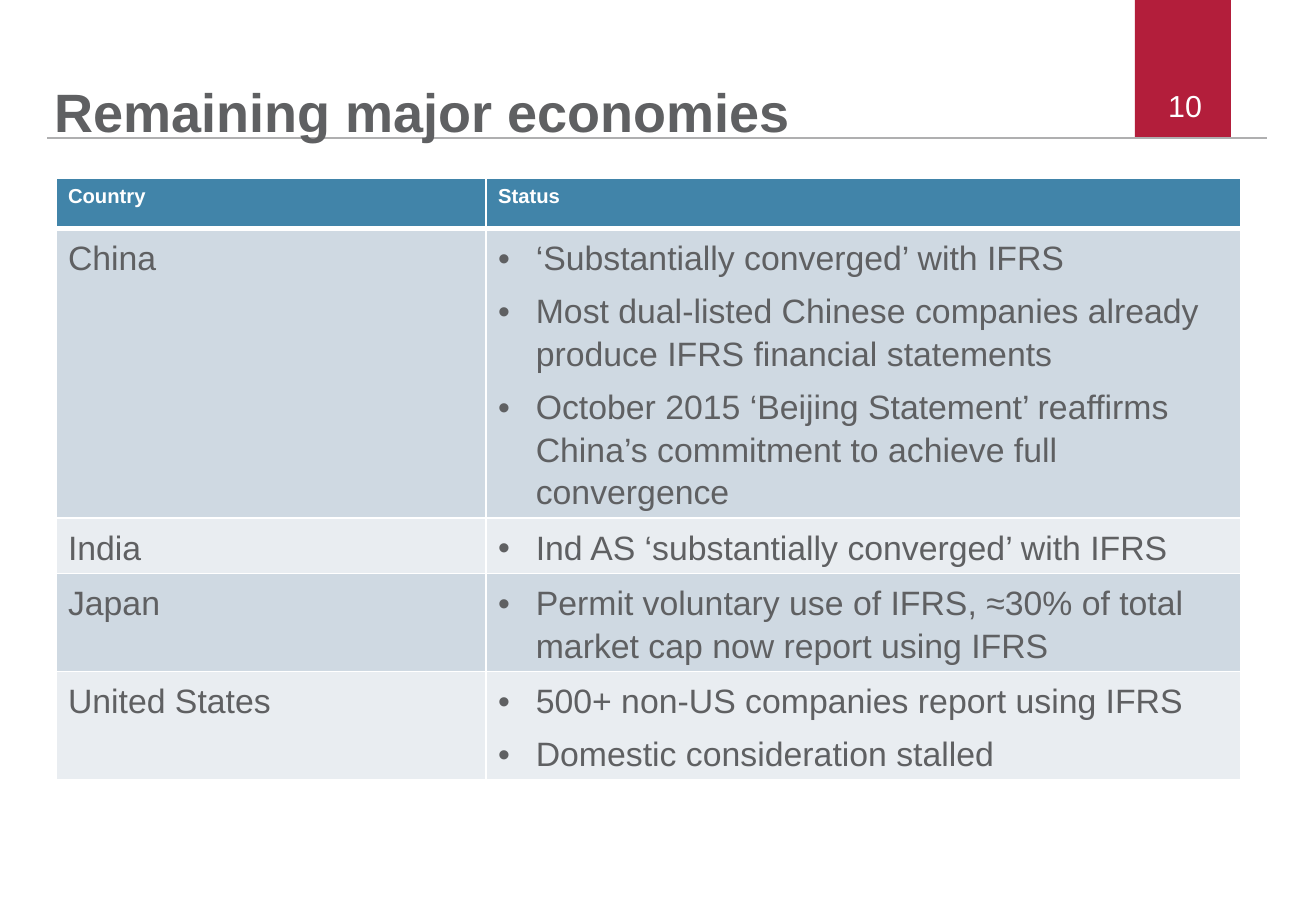
"""Build the slide on the IFRS status of the remaining major economies."""
from lxml import etree
from pptx import Presentation
from pptx.dml.color import RGBColor
from pptx.enum.shapes import MSO_CONNECTOR, MSO_SHAPE
from pptx.enum.text import MSO_ANCHOR, PP_ALIGN
from pptx.oxml.ns import qn
from pptx.util import Inches, Pt

RECT, STRAIGHT = MSO_SHAPE.RECTANGLE, MSO_CONNECTOR.STRAIGHT
BOTTOM, MIDDLE = MSO_ANCHOR.BOTTOM, MSO_ANCHOR.MIDDLE
LEFT, RIGHT = PP_ALIGN.LEFT, PP_ALIGN.RIGHT
COLORS = {"red": "B31E3B", "rule": "AFAFB0", "text": "5F6062", "white": "FFFFFF",
          "header": "4184A9", "dark": "CFD9E2", "light": "E9EDF1"}
RULE_Y = 1.14
COLUMNS = [3.54, 6.21]
ROWS = [
    (0.41, "Country", ["Status"]),
    (2.37, "China", [
        "‘Substantially converged’ with IFRS",
        "Most dual-listed Chinese companies already produce IFRS financial statements",
        "October 2015 ‘Beijing Statement’ reaffirms China’s commitment to achieve full convergence"]),
    (0.45, "India", ["Ind AS ‘substantially converged’ with IFRS"]),
    (0.8, "Japan", ["Permit voluntary use of IFRS, ≈30% of total market cap now report using IFRS"]),
    (0.89, "United States", ["500+ non-US companies report using IFRS", "Domestic consideration stalled"]),
]


def rgb(name):
    """Return the named palette colour."""
    return RGBColor.from_string(COLORS[name])


def add_text(p, text, size, color, bold=False):
    """Add one formatted run to a paragraph."""
    r = p.add_run()
    r.text = text
    r.font.name, r.font.size, r.font.bold = "Arial", Pt(size), bold
    r.font.color.rgb = rgb(color)


prs = Presentation()
prs.slide_width, prs.slide_height = Inches(10.83), Inches(7.5)
s = prs.slides.add_slide(prs.slide_layouts[5])

tab = s.shapes.add_shape(RECT, Inches(9.34), 0, Inches(0.79), Inches(RULE_Y))
tab.shadow.inherit = False
tab.fill.solid()
tab.fill.fore_color.rgb = rgb("red")
tab.line.fill.background()

rule = s.shapes.add_connector(STRAIGHT, Inches(0.39), Inches(RULE_Y), Inches(10.43), Inches(RULE_Y))
rule.line.color.rgb = rgb("rule")
rule.line.width = Pt(1.2)
etree.SubElement(rule.element.spPr, qn("a:effectLst"))

title = s.shapes.title
title.left, title.top, title.width, title.height = map(Inches, (0.38, 0.2, 8.02, 0.99))
s.shapes.element.append(title.element)
tf = title.text_frame
tf.vertical_anchor = BOTTOM
tf.margin_left, tf.margin_bottom = Inches(0.07), 0
p = tf.paragraphs[0]
p.alignment, p.line_spacing = LEFT, 0.9
add_text(p, "Remaining major economies", 32, "text", True)

frame = s.shapes.add_table(len(ROWS), len(COLUMNS), Inches(0.46), Inches(1.47),
                           Inches(sum(COLUMNS)), Inches(sum(row[0] for row in ROWS)))
table = frame.table
for column, width in zip(table.columns, COLUMNS):
    column.width = Inches(width)

for i, (height, country, status) in enumerate(ROWS):
    table.rows[i].height = Inches(height)
    fill = "header" if i == 0 else ("light", "dark")[i % 2]
    for j, lines in enumerate([[country], status]):
        cell = table.cell(i, j)
        cell.fill.solid()
        cell.fill.fore_color.rgb = rgb(fill)
        tcPr = cell.fill._xPr
        for k, side in enumerate(("lnL", "lnR", "lnT", "lnB")):
            thick = (i, side) in ((0, "lnB"), (1, "lnT"))
            ln = etree.Element(qn(f"a:{side}"), w=str(Pt(3 if thick else 1)))
            solid = etree.SubElement(ln, qn("a:solidFill"))
            etree.SubElement(solid, qn("a:srgbClr"), val=COLORS["white"])
            tcPr.insert(k, ln)
        tf = cell.text_frame
        for n, line in enumerate(lines):
            p = tf.add_paragraph() if n else tf.paragraphs[0]
            if i == 0:
                add_text(p, line, 12, "white", True)
                continue
            p.line_spacing, p.space_after = 1.14, Pt(6)
            if j == 1:
                pPr = p._p.get_or_add_pPr()
                pPr.set("marL", str(Inches(0.31)))
                pPr.set("indent", str(-Inches(0.31)))
                etree.SubElement(pPr, qn("a:buFont"), typeface="Arial")
                etree.SubElement(pPr, qn("a:buChar"), char="•")
            add_text(p, line, 20, "text")

sp = s.shapes.add_textbox(Inches(7.46), Inches(0.67), Inches(2.53), Inches(0.4))
tf = sp.text_frame
tf.word_wrap = True
tf.vertical_anchor = MIDDLE
p = tf.paragraphs[0]
p.alignment = RIGHT
add_text(p, "10", 18, "white")

prs.save("out.pptx")
